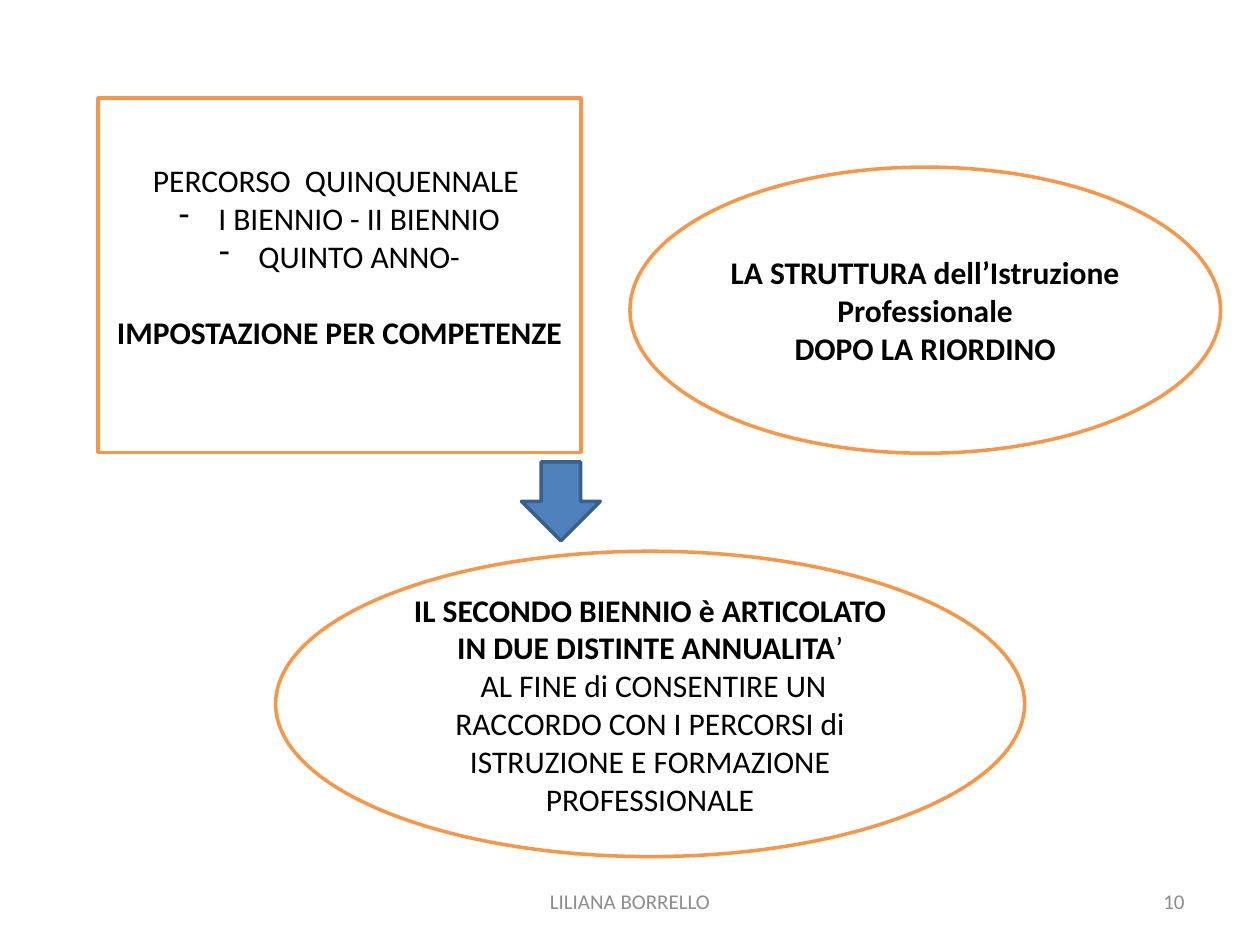
from pptx import Presentation
from pptx.dml.color import RGBColor
from pptx.enum.shapes import MSO_SHAPE as Shape
from pptx.enum.text import MSO_ANCHOR as Anchor, PP_ALIGN as Align
from pptx.util import Pt
from lxml.etree import SubElement
from pptx.oxml.ns import qn

WHITE = RGBColor(0xFF, 0xFF, 0xFF)
BLACK = RGBColor(0, 0, 0)
ORANGE = RGBColor(0xF7, 0x96, 0x46)
BLUE = RGBColor(0x4F, 0x81, 0xBD)
DARK_BLUE = RGBColor(0x3A, 0x5F, 0x8C)
GRAY = RGBColor(0x8C, 0x8C, 0x8C)
LINE_HEIGHT = Pt(22)

presentation = Presentation()
presentation.slide_width, presentation.slide_height = Pt(720), Pt(540)
slide = presentation.slides.add_slide(presentation.slide_layouts[6])


def add_outline(kind, box, fill, line):
    shape = slide.shapes.add_shape(kind, *map(Pt, box))
    shape.shadow.inherit = False
    shape.fill.solid()
    shape.fill.fore_color.rgb = fill
    shape.line.color.rgb = line
    shape.line.width = Pt(2)
    return shape


def write(shape, paragraphs, size, color, align):
    frame = shape.text_frame
    frame.word_wrap = True
    frame.vertical_anchor = Anchor.MIDDLE
    for index, runs in enumerate(paragraphs):
        paragraph = frame.add_paragraph() if index else frame.paragraphs[0]
        paragraph.alignment = align
        for text, bold in runs:
            run = paragraph.add_run()
            run.text = text
            run.font.name = "Calibri"
            run.font.size = Pt(size)
            run.font.bold = bold
            run.font.color.rgb = color
    return frame


panels = [
    (Shape.RECTANGLE, (56, 56, 276, 202.5), [
        [("PERCORSO  QUINQUENNALE ", False)],
        [("I BIENNIO - II BIENNIO", False)],
        [("QUINTO ANNO-", False)],
        [("IMPOSTAZIONE PER COMPETENZE", True)],
    ]),
    (Shape.OVAL, (360, 95.5, 337.5, 163.5), [
        [("LA STRUTTURA dell’Istruzione Professionale", True)],
        [("DOPO LA RIORDINO", True)],
    ]),
    (Shape.OVAL, (157.5, 315, 428, 174.5), [
        [("IL SECONDO BIENNIO è ARTICOLATO IN DUE DISTINTE ANNUALITA", True), ("’", False)],
        [(" AL FINE di CONSENTIRE UN RACCORDO CON I PERCORSI di "
          "ISTRUZIONE E FORMAZIONE PROFESSIONALE", False)],
    ]),
]
frames = [
    write(add_outline(kind, box, WHITE, ORANGE), paragraphs, 18, BLACK, Align.CENTER)
    for kind, box, paragraphs in panels
]

course_frame = frames[0]
course_frame.margin_bottom += LINE_HEIGHT
course_frame.paragraphs[3].space_before = LINE_HEIGHT
for paragraph in course_frame.paragraphs[1:3]:
    properties = paragraph._p.get_or_add_pPr()
    properties.set("marL", str(Pt(22.5)))
    properties.set("indent", str(-Pt(22.5)))
    SubElement(properties, qn("a:buFontTx"))
    SubElement(properties, qn("a:buChar"), char="-")

add_outline(Shape.DOWN_ARROW, (298, 264, 45, 45), BLUE, DARK_BLUE)

footers = [
    ("LILIANA BORRELLO", 246, 228, Align.CENTER),
    ("10", 516, 168, Align.RIGHT),
]
for text, left, width, align in footers:
    box = slide.shapes.add_textbox(Pt(left), Pt(500.5), Pt(width), Pt(28.75))
    write(box, [[(text, False)]], 12, GRAY, align)

presentation.save("out.pptx")
